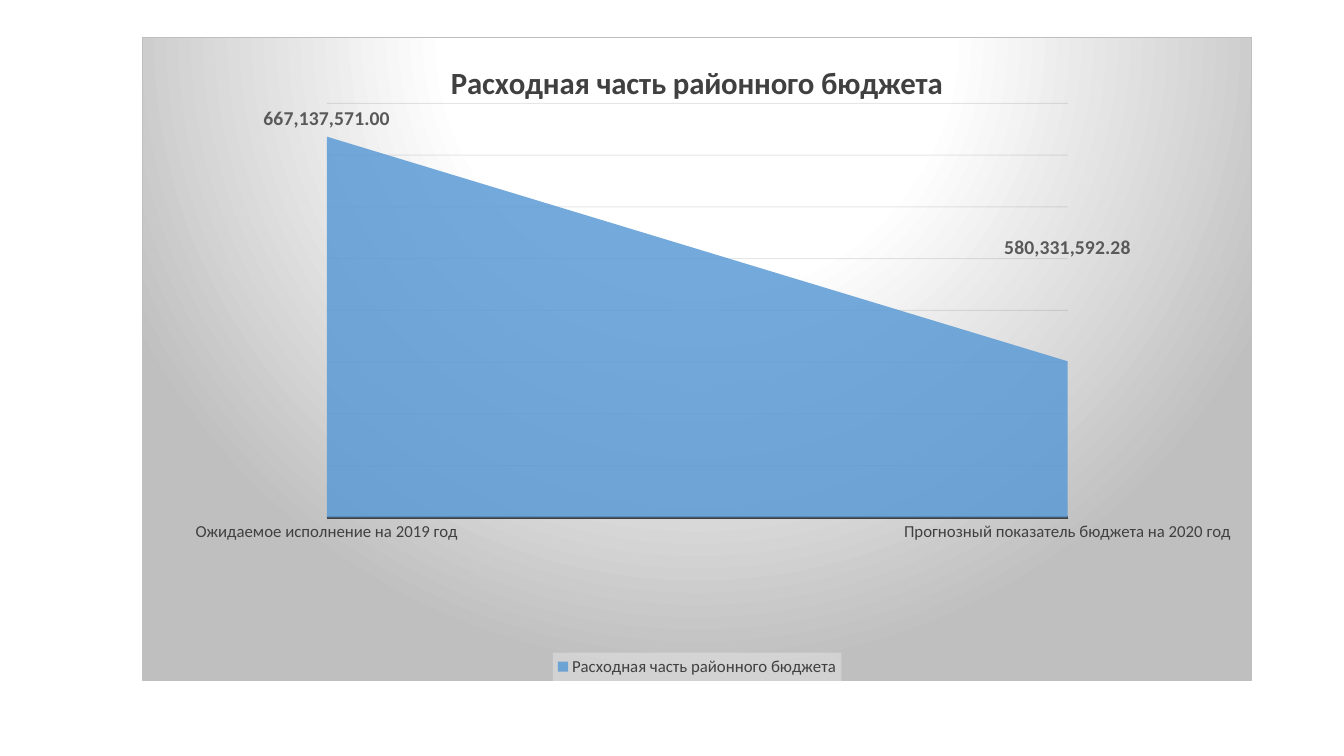
from dataclasses import dataclass
from typing import Any

from lxml.etree import SubElement
from pptx import Presentation
from pptx.chart.chart import Chart
from pptx.chart.data import CategoryChartData
from pptx.dml.color import RGBColor
from pptx.enum.chart import XL_CHART_TYPE, XL_LEGEND_POSITION, XL_TICK_LABEL_POSITION, XL_TICK_MARK
from pptx.oxml import parse_xml
from pptx.oxml.ns import nsdecls, qn
from pptx.util import Inches, Pt


@dataclass(frozen=True)
class Theme:
    font: str = "Calibri"
    area: str = "5B9BD5"
    text: str = "404040"
    label: str = "595959"
    grid: str = "0D0D0D"
    panel: str = "BFBFBF"
    legend: str = "F2F2F2"
    white: str = "FFFFFF"
    title_size: int = 22
    label_size: int = 14
    axis_size: int = 12


@dataclass(frozen=True)
class Spending:
    period: str
    amount: float
    label_shift: float


THEME = Theme()
TITLE = "Расходная часть районного бюджета"
NUMBER_FORMAT = "#,##0.00"
SPENDING = [
    Spending("Ожидаемое исполнение на 2019 год", 667137571, -0.324),
    Spending("Прогнозный показатель бюджета на 2020 год", 580331592.28, -0.298),
]


def set_attributes(target: Any, values: dict[str, Any]) -> None:
    for name, value in values.items():
        setattr(target, name, value)


def style_font(font: Any, size: int, color: str, bold: bool = False) -> None:
    set_attributes(font, {"name": THEME.font, "size": Pt(size), "bold": bold})
    font.color.rgb = RGBColor.from_string(color)


def style_line(line: Any, color: str, width: float) -> None:
    line.color.rgb = RGBColor.from_string(color)
    line.width = Pt(width)


def set_alpha(parent: Any, query: str, percent: int) -> None:
    for color in parent.xpath(query):
        SubElement(color, qn("a:alpha")).set("val", str(percent * 1000))


def manual_layout(**values: Any) -> Any:
    """Make a c:layout whose numbers are fractions of the chart."""
    items = "".join(f'<c:{name} val="{value}"/>' for name, value in values.items())
    return parse_xml(f'<c:layout {nsdecls("c")}><c:manualLayout>{items}</c:manualLayout></c:layout>')


def replace_layout(parent: Any, index: int, layout: Any) -> None:
    for old_layout in parent.xpath("./c:layout"):
        parent.remove(old_layout)
    parent.insert(index, layout)


def style_background(chart: Chart) -> None:
    stops = [(0, THEME.white), (39, THEME.white), (100, THEME.panel)]
    stop_xml = "".join(
        f'<a:gs pos="{position * 1000}"><a:srgbClr val="{color}"/></a:gs>' for position, color in stops
    )
    properties = parse_xml(
        f'<c:spPr {nsdecls("c", "a")}><a:gradFill><a:gsLst>{stop_xml}</a:gsLst>'
        '<a:path path="circle"><a:fillToRect l="50000" t="-80000" r="50000" b="180000"/></a:path>'
        f'</a:gradFill><a:ln w="{Pt(0.75)}"><a:solidFill><a:srgbClr val="{THEME.panel}"/>'
        "</a:solidFill></a:ln></c:spPr>"
    )
    chart.element.xpath("./c:chart")[0].addnext(properties)


def style_title(chart: Chart) -> None:
    chart.has_title = True
    paragraph = chart.chart_title.text_frame.paragraphs[0]
    run = paragraph.add_run()
    run.text = TITLE
    style_font(run.font, THEME.title_size, THEME.text, bold=True)
    layout = manual_layout(xMode="edge", yMode="edge", x=0.273, y=0.028)
    replace_layout(chart.chart_title.element, 1, layout)


def style_axes(chart: Chart) -> None:
    category_axis, value_axis = chart.category_axis, chart.value_axis
    for axis in (category_axis, value_axis):
        style_font(axis.tick_labels.font, THEME.axis_size, THEME.text)
    set_attributes(category_axis, {
        "major_tick_mark": XL_TICK_MARK.NONE,
        "minor_tick_mark": XL_TICK_MARK.NONE,
        "has_major_gridlines": False,
    })
    style_line(category_axis.format.line, THEME.text, 1.5)
    set_attributes(value_axis, {
        "minimum_scale": 520_000_000,
        "maximum_scale": 680_000_000,
        "major_unit": 20_000_000,
        "major_tick_mark": XL_TICK_MARK.OUTSIDE,
        "minor_tick_mark": XL_TICK_MARK.NONE,
        "tick_label_position": XL_TICK_LABEL_POSITION.NONE,
        "has_major_gridlines": True,
    })
    set_attributes(value_axis.tick_labels, {"number_format": NUMBER_FORMAT, "number_format_is_linked": False})
    value_axis.format.line.fill.background()
    style_line(value_axis.major_gridlines.format.line, THEME.grid, 0.75)
    set_alpha(chart.element, ".//c:majorGridlines//a:srgbClr", 10)
    for crossing in chart.element.xpath(".//c:valAx/c:crossBetween"):
        crossing.set("val", "midCat")


def hide_leader_lines(labels: Any) -> None:
    for leader_lines in labels.xpath("./c:showLeaderLines"):
        leader_lines.set("val", "0")
    labels.append(parse_xml(
        f'<c:extLst {nsdecls("c")}><c:ext uri="{{CE6537A1-D6FC-4f65-9D91-7224C49458BB}}" '
        'xmlns:c15="http://schemas.microsoft.com/office/drawing/2012/chart">'
        '<c15:showLeaderLines val="0"/></c:ext></c:extLst>'
    ))


def style_series(chart: Chart) -> None:
    plot = chart.plots[0]
    plot.vary_by_categories = False
    series = plot.series[0]
    series.format.fill.solid()
    series.format.fill.fore_color.rgb = RGBColor.from_string(THEME.area)
    series.format.line.fill.background()
    set_alpha(chart.element, ".//c:ser/c:spPr/a:solidFill/a:srgbClr", 85)
    labels = series.data_labels
    set_attributes(labels, {
        "show_value": True, "number_format": NUMBER_FORMAT, "number_format_is_linked": False,
    })
    style_font(labels.font, THEME.label_size, THEME.label, bold=True)
    for index in range(len(SPENDING)):
        style_font(series.points[index].data_label.font, THEME.label_size, THEME.label, bold=True)
    for label, spending in zip(chart.element.xpath(".//c:dLbl"), SPENDING):
        replace_layout(label, 1, manual_layout(x=0, y=spending.label_shift))
        label.insert(2, parse_xml(
            f'<c:numFmt {nsdecls("c")} formatCode="{NUMBER_FORMAT}" sourceLinked="0"/>'
        ))
    hide_leader_lines(chart.element.xpath(".//c:ser/c:dLbls")[0])


def style_legend(chart: Chart) -> None:
    chart.has_legend = True
    set_attributes(chart.legend, {"position": XL_LEGEND_POSITION.BOTTOM, "include_in_layout": False})
    style_font(chart.legend.font, THEME.axis_size, THEME.text)
    legend = chart.element.xpath(".//c:legend")[0]
    replace_layout(legend, 1, manual_layout(xMode="edge", yMode="edge", x=0.37, y=0.956, w=0.26, h=0.044))
    properties = parse_xml(
        f'<c:spPr {nsdecls("c", "a")}><a:solidFill><a:srgbClr val="{THEME.legend}"/></a:solidFill>'
        "<a:ln><a:noFill/></a:ln></c:spPr>"
    )
    legend.xpath("./c:overlay")[0].addnext(properties)
    set_alpha(legend, "./c:spPr/a:solidFill/a:srgbClr", 39)


def main() -> None:
    presentation = Presentation()
    set_attributes(presentation, {"slide_width": Inches(13.33), "slide_height": Inches(7.5)})
    slide = presentation.slides.add_slide(presentation.slide_layouts[6])
    chart_data = CategoryChartData(number_format=NUMBER_FORMAT)
    chart_data.categories = [spending.period for spending in SPENDING]
    chart_data.add_series(TITLE, [spending.amount for spending in SPENDING])
    chart = slide.shapes.add_chart(
        XL_CHART_TYPE.AREA_STACKED, Inches(1.41), Inches(0.37), Inches(11.01), Inches(6.39), chart_data
    ).chart
    style_font(chart.font, 10, "000000")
    for style in (style_background, style_title, style_axes, style_series, style_legend):
        style(chart)
    plot_layout = manual_layout(
        layoutTarget="inner", xMode="edge", yMode="edge", x=0.166, y=0.102, w=0.668, h=0.644
    )
    replace_layout(chart.element.xpath(".//c:plotArea")[0], 0, plot_layout)
    presentation.save("out.pptx")


if __name__ == "__main__":
    main()
